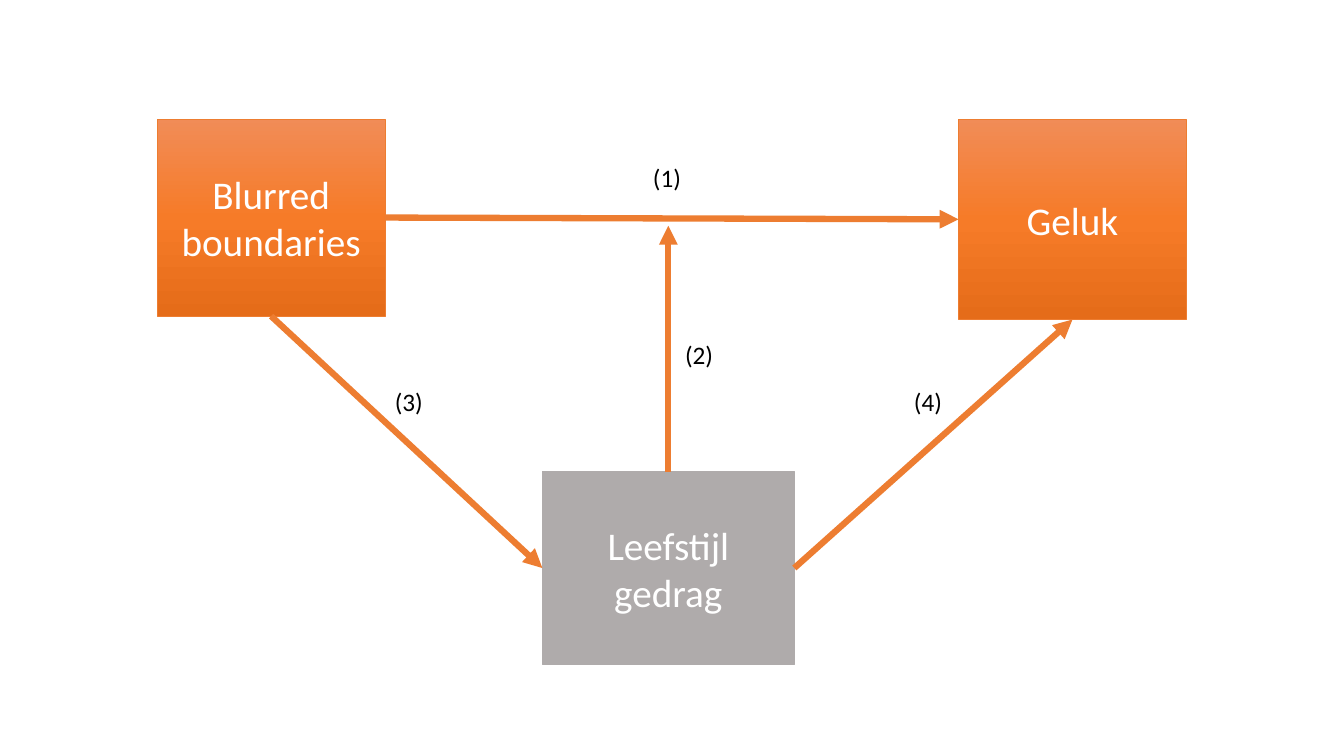
from copy import deepcopy

from pptx import Presentation
from pptx.dml.color import RGBColor as RGB
from pptx.enum.shapes import MSO_CONNECTOR as CONN, MSO_SHAPE as SHAPE
from pptx.enum.text import MSO_ANCHOR as ANCHOR, PP_ALIGN as ALIGN
from pptx.oxml.ns import qn
from pptx.util import Pt
from lxml import etree

WHITE = RGB(0xFF, 0xFF, 0xFF)
BLACK = RGB(0x00, 0x00, 0x00)
ORANGE = RGB(0xED, 0x7D, 0x31)
GREY = RGB(0xAF, 0xAB, 0xAB)
ORANGE_STOPS = [(0, RGB(0xF1, 0x8C, 0x57)), (0.5, RGB(0xF6, 0x7B, 0x28)),
                (1, RGB(0xE5, 0x6C, 0x19))]

# Connection sites of a rectangle
TOP, LEFT, BOTTOM, RIGHT = range(4)


def write(sp, text, size, color, align):
    tf = sp.text_frame
    tf.word_wrap = True
    tf.vertical_anchor = ANCHOR.MIDDLE
    p = tf.paragraphs[0]
    p.alignment = align
    r = p.add_run()
    r.text = text
    for name, value in {"size": Pt(size), "name": "Calibri"}.items():
        setattr(r.font, name, value)
    r.font.color.rgb = color


def fill_gradient(fill, sp, stops):
    fill.gradient()
    fill.gradient_angle = 270
    stop_list = sp._element.spPr.find(qn("a:gradFill")).find(qn("a:gsLst"))
    stop_list.insert(1, deepcopy(stop_list[0]))
    for stop, (position, color) in zip(fill.gradient_stops, stops):
        stop.position = position
        stop.color.rgb = color


def add_concept(shapes, box, text, line_color, stops=None):
    sp = shapes.add_shape(SHAPE.RECTANGLE, *map(Pt, box))
    sp.shadow.inherit = False
    if stops:
        fill_gradient(sp.fill, sp, stops)
    else:
        sp.fill.solid()
        sp.fill.fore_color.rgb = line_color
    sp.line.color.rgb = line_color
    sp.line.width = Pt(0.5)
    write(sp, text, 28, WHITE, ALIGN.CENTER)
    return sp


def add_arrow(shapes, start, site, end=None, end_site=None, rise=0):
    """Link two concepts, or point straight up from one by rise points."""
    cxn = shapes.add_connector(CONN.STRAIGHT, 0, 0, 0, 0)
    cxn.begin_connect(start, site)
    if end is None:
        cxn.end_x, cxn.end_y = cxn.begin_x, cxn.begin_y - Pt(rise)
    else:
        cxn.end_connect(end, end_site)
    cxn.line.color.rgb = ORANGE
    cxn.line.width = Pt(4.5)
    etree.SubElement(cxn.line._get_or_add_ln(), qn("a:tailEnd"), type="triangle")
    etree.SubElement(cxn._element.spPr, qn("a:effectLst"))


def add_model(slide, box):
    x, y, w, h = box
    shapes = slide.shapes

    # Concepts: two at the top corners, one at the bottom
    side = 162.7
    blurred = add_concept(shapes, (x, y, side, 140.8), "Blurred boundaries",
                          ORANGE, ORANGE_STOPS)
    happiness = add_concept(shapes, (x + w - side, y, side, 143.3), "Geluk",
                            ORANGE, ORANGE_STOPS)
    lifestyle = add_concept(shapes, (x + 275.1, y + h - 137.5, 180, 137.5),
                            "Leefstijl gedrag", GREY)

    # Relations
    add_arrow(shapes, blurred, BOTTOM, lifestyle, LEFT)
    add_arrow(shapes, blurred, RIGHT, happiness, LEFT)
    add_arrow(shapes, lifestyle, RIGHT, happiness, BOTTOM)
    add_arrow(shapes, lifestyle, TOP, rise=175.7)

    # Relation numbers
    spots = [(347, 26.6), (370, 153.3), (162.7, 186.4), (533.5, 186.4)]
    for number, (dx, dy) in enumerate(spots, 1):
        label = shapes.add_textbox(Pt(x + dx), Pt(y + dy), Pt(41), Pt(30.2))
        write(label, f"({number})", 18, BLACK, ALIGN.LEFT)


def main():
    prs = Presentation()
    prs.slide_width, prs.slide_height = Pt(960), Pt(540)
    slide = prs.slides.add_slide(prs.slide_layouts[6])
    add_model(slide, (112.3, 85, 735.1, 389.5))
    prs.save("out.pptx")


if __name__ == "__main__":
    main()
